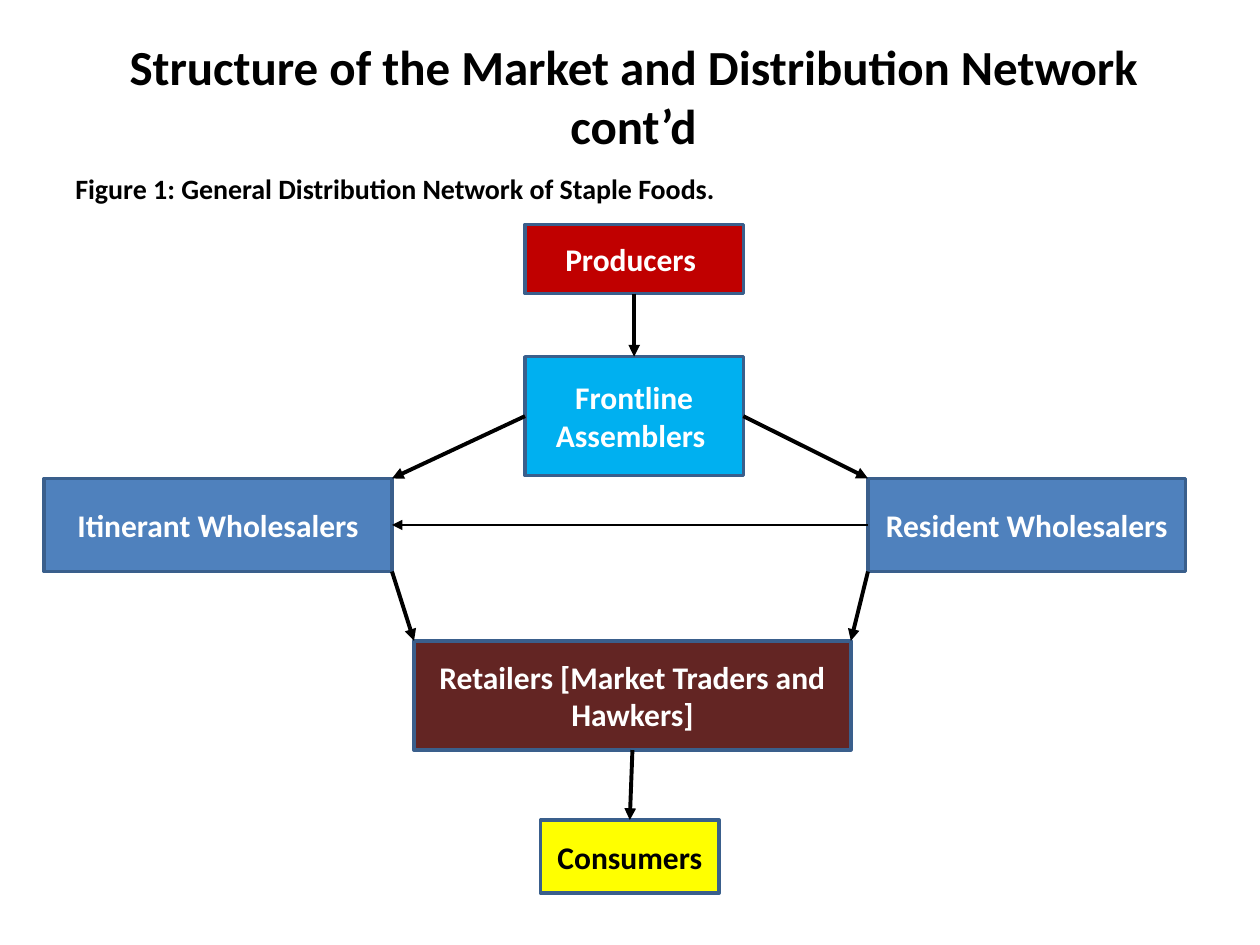
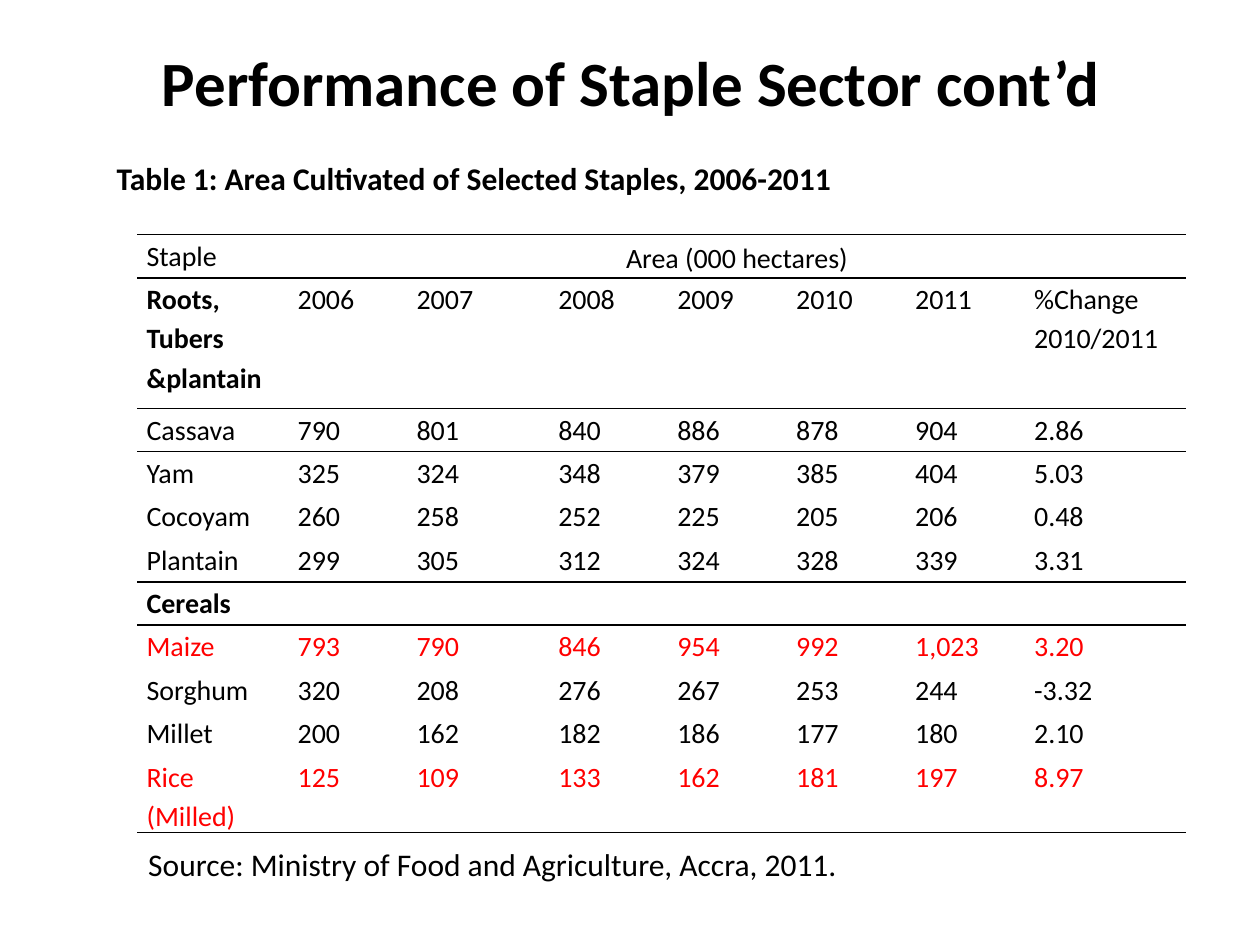
from lxml.etree import SubElement
from pptx import Presentation
from pptx.dml.color import RGBColor
from pptx.enum.shapes import MSO_CONNECTOR, MSO_SHAPE
from pptx.enum.text import MSO_ANCHOR, PP_ALIGN
from pptx.oxml.ns import qn
from pptx.util import Pt

FONT = "Calibri"
BLACK, WHITE, RED = "000000", "FFFFFF", "FF0000"
EDGE, BLUE = "3A5F8C", "4F81BD"
TOP, LEFT, BOTTOM, RIGHT = range(4)
PLAIN_GRID = "{2D5ABB26-0587-4C30-8999-92F81FD0307C}"

WIDTHS = [86.3, 68, 81, 68, 68, 68, 68, 92]
ROW_H, HEAD_H = 24.8, 74.6
RULED = {0, 1, 5, 10}  # rows with a line below
ROWS = [
    ["Staple", "Area (000 hectares)"],
    ["Roots, Tubers &plantain", "2006", "2007", "2008", "2009", "2010",
     "2011", "%Change 2010/2011"],
    ["Cassava", "790", "801", "840", "886", "878", "904", "2.86"],
    ["Yam", "325", "324", "348", "379", "385", "404", "5.03"],
    ["Cocoyam", "260", "258", "252", "225", "205", "206", "0.48"],
    ["Plantain", "299", "305", "312", "324", "328", "339", "3.31"],
    ["Cereals"],
    ["Maize", "793", "790", "846", "954", "992", "1,023", "3.20"],
    ["Sorghum", "320", "208", "276", "267", "253", "244", "-3.32"],
    ["Millet", "200", "162", "182", "186", "177", "180", "2.10"],
    ["Rice (Milled)", "125", "109", "133", "162", "181", "197", "8.97"],
]
GROUPS = {"Roots, Tubers &plantain", "Cereals"}
MARKED = {"Maize", "Rice (Milled)"}


def rgb(code):
    return RGBColor.from_string(code)


def write(frame, text, size, color=BLACK, bold=False, align=PP_ALIGN.LEFT):
    para = frame.paragraphs[0]
    para.text = text
    para.alignment = align
    font = para.font
    font.name, font.size, font.bold = FONT, Pt(size), bold
    font.color.rgb = rgb(color)
    return para


def label(slide, area, text, size, bold=True, align=PP_ALIGN.LEFT,
          anchor=MSO_ANCHOR.TOP, wrap=True):
    frame = slide.shapes.add_textbox(*map(Pt, area)).text_frame
    frame.word_wrap = wrap
    frame.vertical_anchor = anchor
    write(frame, text, size, bold=bold, align=align)


def title(slide, area, text, size):
    label(slide, area, text, size, align=PP_ALIGN.CENTER,
          anchor=MSO_ANCHOR.MIDDLE)


def box(slide, area, text, fill, color=WHITE):
    shape = slide.shapes.add_shape(MSO_SHAPE.RECTANGLE, *map(Pt, area))
    shape.shadow.inherit = False
    shape.fill.solid()
    shape.fill.fore_color.rgb = rgb(fill)
    shape.line.color.rgb = rgb(EDGE)
    shape.line.width = Pt(2)
    frame = shape.text_frame
    frame.word_wrap = True
    frame.vertical_anchor = MSO_ANCHOR.MIDDLE
    write(frame, text, 18, color, True, PP_ALIGN.CENTER)
    return shape


def corner(shape, down, right):
    """Point at a corner; down and right are 0 or 1."""
    return (shape.left + right * shape.width, shape.top + down * shape.height)


def arrow(slide, start, end, width=2.25):
    """Join two ends, each a (shape, side) pair or an (x, y) point."""
    line = slide.shapes.add_connector(MSO_CONNECTOR.STRAIGHT, 0, 0, 0, 0)
    if isinstance(start[0], int):
        line.begin_x, line.begin_y = start
    else:
        line.begin_connect(*start)
    if isinstance(end[0], int):
        line.end_x, line.end_y = end
    else:
        line.end_connect(*end)
    line.line.color.rgb = rgb(BLACK)
    line.line.width = Pt(width)
    SubElement(line.line._get_or_add_ln(), qn("a:tailEnd"), type="triangle")
    SubElement(line._element.spPr, qn("a:effectLst"))


def rule(cell, side):
    """Draw a black line on a cell's side, lnT or lnB."""
    props = cell._tc.get_or_add_tcPr()
    line = SubElement(props, qn("a:" + side), w=str(Pt(1)))
    fill = SubElement(line, qn("a:solidFill"))
    SubElement(fill, qn("a:srgbClr"), val=BLACK)


def grid(slide, left, top):
    height = ROW_H * (len(ROWS) - 1) + HEAD_H
    frame = slide.shapes.add_table(len(ROWS), len(WIDTHS), Pt(left), Pt(top),
                                   Pt(sum(WIDTHS)), Pt(height))
    table = frame.table
    table.first_row = table.horz_banding = False
    table._tbl.tblPr.find(qn("a:tableStyleId")).text = PLAIN_GRID
    for col, width in zip(table.columns, WIDTHS):
        col.width = Pt(width)
    for i, texts in enumerate(ROWS):
        table.rows[i].height = Pt(HEAD_H if i == 1 else ROW_H)
        color = RED if texts[0] in MARKED else BLACK
        for j in range(len(WIDTHS)):
            cell = table.cell(i, j)
            cell.margin_left = cell.margin_right = Pt(5.4)
            cell.margin_top = cell.margin_bottom = 0
            if i == 0 or i - 1 in RULED:
                rule(cell, "lnT")
            if i in RULED:
                rule(cell, "lnB")
            cell.fill.background()
            if j < len(texts):
                para = write(cell.text_frame, texts[j], 16, color,
                             texts[j] in GROUPS)
                para.line_spacing = 1.15
    area = table.cell(0, 1)
    area.merge(table.cell(0, len(WIDTHS) - 1))
    area.vertical_anchor = MSO_ANCHOR.MIDDLE
    area.text_frame.paragraphs[0].alignment = PP_ALIGN.CENTER


def network(slide):
    label(slide, (36, 94.5, 648, 388), "Figure 1: General Distribution "
          "Network of Staple Foods.", 16)
    title(slide, (38, 9.5, 648, 90),
          "Structure of the Market and Distribution Network cont’d", 28)
    maker = box(slide, (300, 128.2, 124.8, 39.6), "Producers ", "C00000")
    front = box(slide, (300, 203.8, 124.8, 68), "Frontline Assemblers ",
                "00B0F0")
    roam = box(slide, (25.2, 273.4, 198.8, 53.2), "Itinerant Wholesalers",
               BLUE)
    stay = box(slide, (496, 273.4, 181.6, 53.2), "Resident Wholesalers", BLUE)
    shop = box(slide, (236.6, 366.2, 249.6, 62.4),
               "Retailers [Market Traders and Hawkers]", "632523")
    buyer = box(slide, (308.8, 468.6, 102.2, 41.8), "Consumers", "FFFF00",
                BLACK)
    arrow(slide, (stay, LEFT), (roam, RIGHT), 1)
    arrow(slide, (maker, BOTTOM), (front, TOP))
    arrow(slide, (front, LEFT), corner(roam, 0, 1))
    arrow(slide, (front, RIGHT), corner(stay, 0, 0))
    arrow(slide, corner(roam, 1, 1), corner(shop, 0, 0))
    arrow(slide, corner(stay, 1, 0), corner(shop, 0, 1))
    arrow(slide, (shop, BOTTOM), (buyer, TOP))


def staples(slide):
    title(slide, (36.5, 15.2, 648, 62.6),
          "Performance of Staple Sector cont’d", 36)
    grid(slide, 78.4, 134)
    label(slide, (59.6, 87.2, 427, 29), "Table 1: Area Cultivated of Selected "
          "Staples, 2006-2011", 18, anchor=MSO_ANCHOR.MIDDLE, wrap=False)
    label(slide, (77.6, 479.6, 527, 29), "Source: Ministry of Food and "
          "Agriculture, Accra, 2011.", 18, bold=False)


def main():
    deck = Presentation()
    deck.slide_width, deck.slide_height = Pt(720), Pt(540)
    for draw in (network, staples):
        draw(deck.slides.add_slide(deck.slide_layouts[6]))
    deck.save("out.pptx")


if __name__ == "__main__":
    main()
